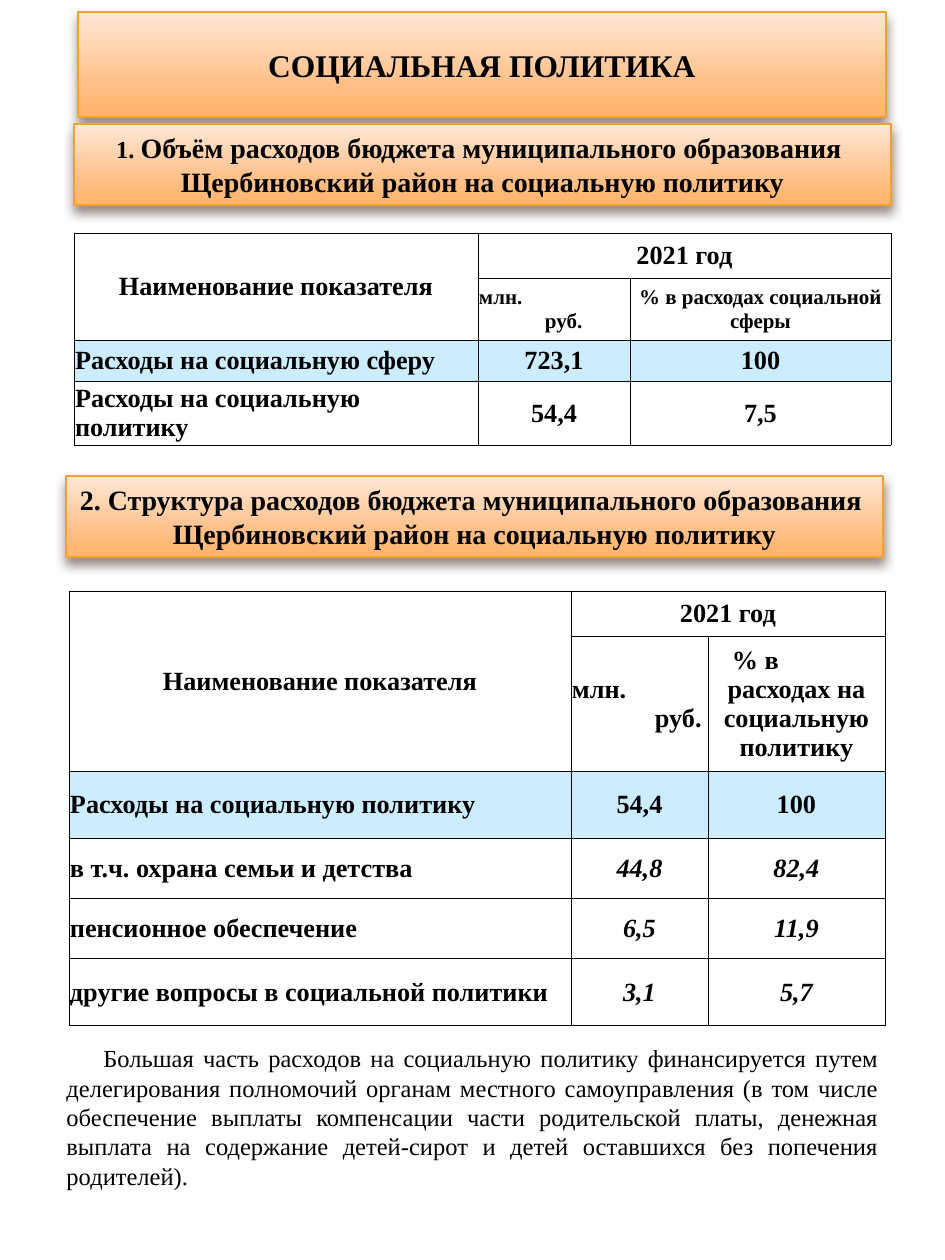
from dataclasses import dataclass

from lxml import etree
from pptx import Presentation
from pptx.dml.color import RGBColor
from pptx.enum.shapes import MSO_SHAPE
from pptx.enum.text import MSO_ANCHOR, MSO_AUTO_SIZE, PP_ALIGN
from pptx.oxml.ns import qn
from pptx.util import Emu, Pt

LEFT, CENTER, JUSTIFY = PP_ALIGN.LEFT, PP_ALIGN.CENTER, PP_ALIGN.JUSTIFY
MIDDLE = MSO_ANCHOR.MIDDLE
GROW = MSO_AUTO_SIZE.SHAPE_TO_FIT_TEXT
RECTANGLE = MSO_SHAPE.RECTANGLE
TITLE_ONLY = 5
SCALE = 914400 / 126


@dataclass(frozen=True)
class Theme:
    font: str = "Times New Roman"
    ink: str = "000000"
    gradient: tuple = ((0, "FFE7D7"), (72, "FFBE84"), (100, "FFB468"))
    outline: str = "F0A22E"
    shadow: str = "4E3B30"
    total: str = "CCECFF"
    title: int = 18
    heading: int = 16
    cell: int = 15
    body: int = 14
    small: int = 12


THEME = Theme()


@dataclass(frozen=True)
class Line:
    text: str
    align: int = CENTER
    indent: int = 0
    size: int = THEME.cell
    italic: bool = False


def px(n):
    return Emu(round(n * SCALE))


def box(left, top, width, height):
    return px(left), px(top), px(width), px(height)


def color_node(parent, value):
    return etree.SubElement(parent, qn("a:srgbClr"), val=value)


def format_run(r, size, bold=True, italic=False):
    r.font.name = THEME.font
    r.font.size = Pt(size)
    r.font.bold = bold
    r.font.italic = italic
    r.font.color.rgb = RGBColor.from_string(THEME.ink)


def write_lines(tf, lines):
    """Put each line in a paragraph of its own."""
    tf.text = "\n".join(line.text for line in lines)
    for p, line in zip(tf.paragraphs, lines):
        p.alignment = line.align
        if line.indent:
            p._p.get_or_add_pPr().set("marL", str(px(line.indent)))
        for r in p.runs:
            format_run(r, line.size, italic=line.italic)


def style_banner(sp):
    """Give a shape the gradient, outline and soft shadow of a heading."""
    sp.fill.gradient()
    sp.fill.gradient_angle = 270
    stops = sp._element.spPr.find(".//" + qn("a:gsLst"))
    for stop in list(stops):
        stops.remove(stop)
    for position, value in THEME.gradient:
        stop = etree.SubElement(stops, qn("a:gs"), pos=str(position * 1000))
        color_node(stop, value)
    sp.line.color.rgb = RGBColor.from_string(THEME.outline)
    sp.line.width = Pt(0.79)
    sp.shadow.inherit = False
    effects = sp._element.spPr.find(qn("a:effectLst"))
    shadow = etree.SubElement(effects, qn("a:outerShdw"), blurRad=str(Pt(6)),
                              dist=str(Pt(4)), dir="5400000", rotWithShape="0")
    etree.SubElement(color_node(shadow, THEME.shadow), qn("a:alpha"), val="60000")
    sp.text_frame.word_wrap = True
    sp.text_frame.auto_size = GROW
    sp.text_frame.vertical_anchor = MIDDLE


def add_title(s, text, area):
    sp = s.shapes.title
    sp.left, sp.top, sp.width, sp.height = box(*area)
    style_banner(sp)
    write_lines(sp.text_frame, [Line(text, size=THEME.title)])


def add_heading(s, number, number_size, lines, area):
    sp = s.shapes.add_shape(RECTANGLE, *box(*area))
    style_banner(sp)
    tf = sp.text_frame
    write_lines(tf, [Line(text, size=THEME.heading) for text in lines])
    first = tf.paragraphs[0]
    first.text = number
    format_run(first.runs[0], number_size)
    r = first.add_run()
    r.text = lines[0]
    format_run(r, THEME.heading)


def add_borders(cell):
    tc_pr = cell._tc.get_or_add_tcPr()
    for i, side in enumerate(("a:lnL", "a:lnR", "a:lnT", "a:lnB")):
        ln = etree.Element(qn(side), w=str(Pt(0.5)))
        color_node(etree.SubElement(ln, qn("a:solidFill")), THEME.ink)
        tc_pr.insert(i, ln)


def format_cell(cell, fill=None):
    cell.margin_left = cell.margin_right = cell.margin_top = px(1)
    cell.margin_bottom = 0
    cell.vertical_anchor = MIDDLE
    if fill:
        cell.fill.solid()
        cell.fill.fore_color.rgb = RGBColor.from_string(fill)
    else:
        cell.fill.background()
    add_borders(cell)


def add_budget_table(s, left, top, widths, heights, units, share, rows, italic):
    """Two header rows, a tinted total row, then the detail rows."""
    frame = s.shapes.add_table(len(heights), len(widths),
                               *box(left, top, sum(widths), sum(heights)))
    table = frame.table
    table.first_row = table.horz_banding = False
    for column, width in zip(table.columns, widths):
        column.width = px(width)
    for row, height in zip(table.rows, heights):
        row.height = px(height)
    for i in range(len(heights)):
        for j in range(len(widths)):
            format_cell(table.cell(i, j), THEME.total if i == 2 else None)
    table.cell(0, 0).merge(table.cell(1, 0))
    table.cell(0, 1).merge(table.cell(0, 2))
    write_lines(table.cell(0, 0).text_frame, [Line("Наименование показателя")])
    write_lines(table.cell(0, 1).text_frame, [Line("2021 год")])
    write_lines(table.cell(1, 1).text_frame, units)
    write_lines(table.cell(1, 2).text_frame, share)
    for i, (name, *values) in enumerate(rows, start=2):
        write_lines(table.cell(i, 0).text_frame, [Line(name, LEFT)])
        for j, value in enumerate(values, start=1):
            write_lines(table.cell(i, j).text_frame,
                        [Line(value, italic=italic and i > 2)])


def add_note(s, text, area):
    tf = s.shapes.add_textbox(*box(*area)).text_frame
    tf.word_wrap = True
    tf.auto_size = GROW
    p = tf.paragraphs[0]
    p.text = text
    p.alignment = JUSTIFY
    p._p.get_or_add_pPr().set("indent", str(px(37)))
    format_run(p.runs[0], THEME.body, bold=False)


def main():
    prs = Presentation()
    prs.slide_width, prs.slide_height = px(945), px(1260)
    s = prs.slides.add_slide(prs.slide_layouts[TITLE_ONLY])
    district = "Щербиновский район на социальную политику"

    add_title(s, "СОЦИАЛЬНАЯ ПОЛИТИКА", (78, 39, 808, 51))
    add_heading(s, "1. ", THEME.body,
                ["Объём расходов бюджета муниципального образования ", district],
                (74, 124, 817, 81))
    add_budget_table(
        s, 74, 233, (404, 152, 261), (45, 62, 41, 64),
        [Line("млн.", LEFT, size=THEME.small),
         Line("руб.", LEFT, 66, THEME.small)],
        [Line("% в расходах социальной сферы", size=THEME.small)],
        [("Расходы на социальную сферу", "723,1", "100"),
         ("Расходы на социальную политику", "54,4", "7,5")],
        italic=False)
    add_heading(s, "2. ", THEME.heading,
                ["Структура расходов бюджета муниципального образования ", district],
                (66, 476, 817, 81))
    add_budget_table(
        s, 69, 591, (502, 137, 177), (45, 135, 67, 60, 60, 68),
        [Line("млн.", LEFT), Line("руб.", LEFT, 83)],
        [Line("% в", LEFT, 23), Line("расходах на социальную политику")],
        [("Расходы на социальную политику", "54,4", "100"),
         ("в т.ч. охрана семьи и детства", "44,8", "82,4"),
         ("пенсионное обеспечение", "6,5", "11,9"),
         ("другие вопросы в социальной политики", "3,1", "5,7")],
        italic=True)
    add_note(s, "Большая часть расходов на социальную политику финансируется путем "
             "делегирования полномочий органам местного самоуправления (в том числе "
             "обеспечение выплаты компенсации части родительской платы, денежная "
             "выплата на содержание детей-сирот и детей оставшихся без попечения "
             "родителей).", (54, 1037, 837, 161))
    prs.save("out.pptx")


if __name__ == "__main__":
    main()
